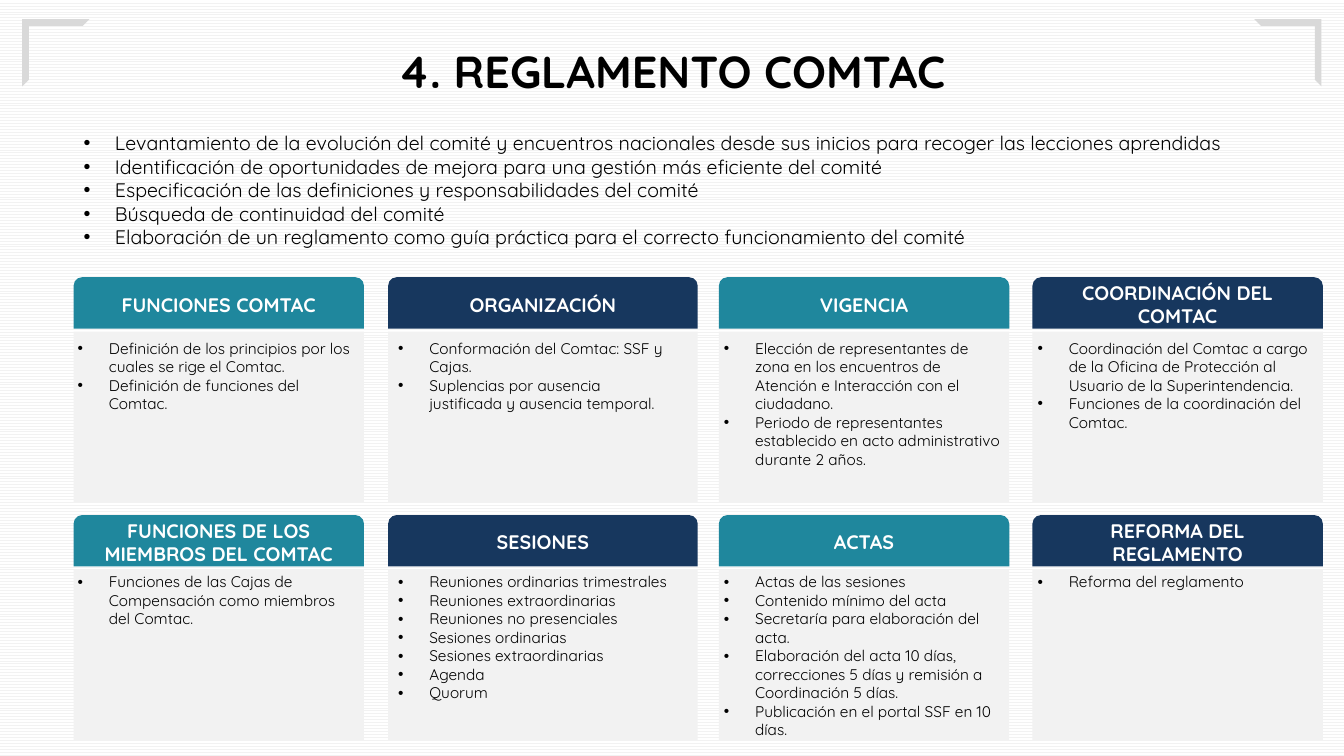
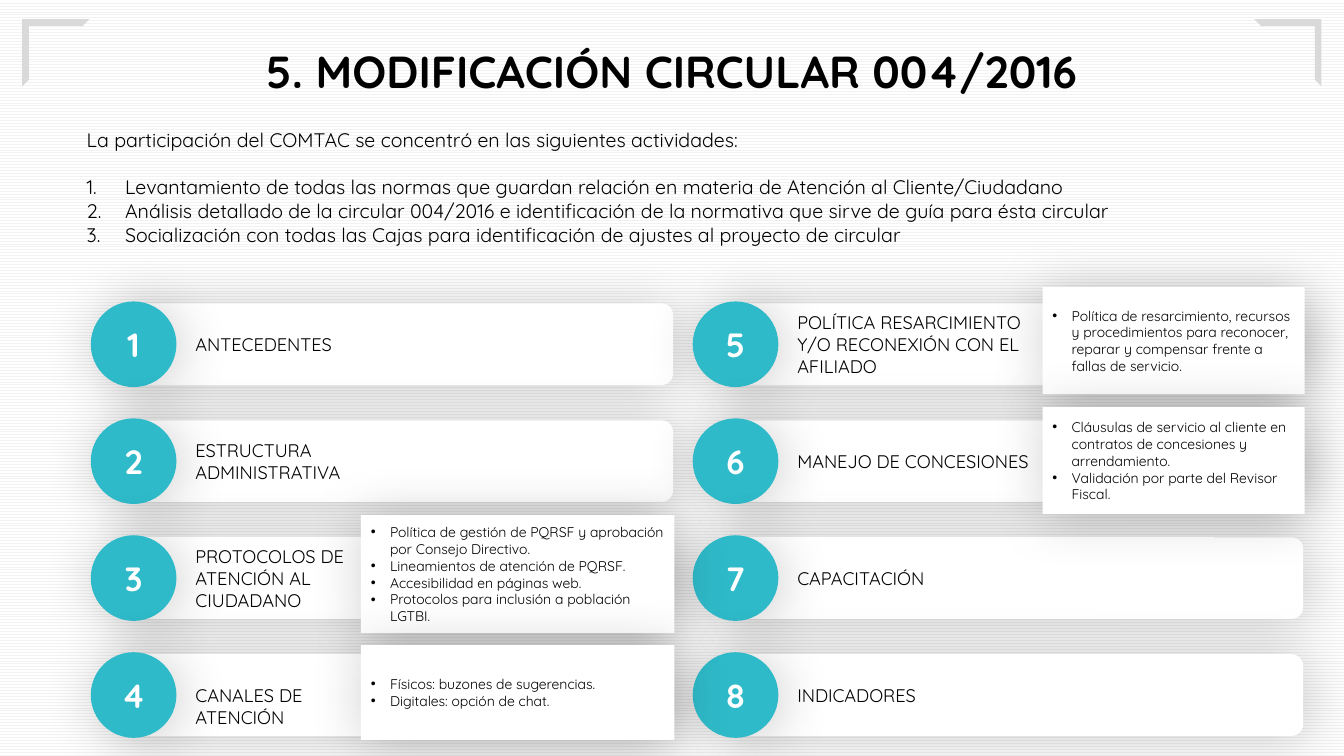
from lxml.etree import SubElement
from pptx import Presentation
from pptx.dml.color import RGBColor
from pptx.enum.dml import MSO_PATTERN
from pptx.enum.shapes import MSO_SHAPE as Kind
from pptx.enum.text import MSO_ANCHOR as Anchor, MSO_AUTO_SIZE as Fit, PP_ALIGN as Align
from pptx.oxml.ns import qn
from pptx.util import Inches, Pt

W, H = 13.33, 7.5
FACE = "Quicksand"
TEAL, NAVY, AQUA = "1F879D", "17375E", "2FBAC9"
WHITE, BLACK, PALE, GREY = "FFFFFF", "000000", "F2F2F2", "D9D9D9"
color = RGBColor.from_string

TITLE = {"size": Pt(32), "bold": True}
LEAD = {"size": Pt(14)}
HEAD = {"size": Pt(14), "bold": True}
NOTE = {"size": Pt(11)}
LABEL = {"size": Pt(13)}
DIGIT = {"size": Pt(24), "bold": True}
SMALL = {"size": Pt(10)}


def draw(slide, kind, area, fill, glow=False):
    """Add a filled shape without outline; glow gives it a soft shadow."""
    shape = slide.shapes.add_shape(kind, *map(Inches, area))
    shape.fill.solid()
    shape.fill.fore_color.rgb = color(fill)
    shape.line.fill.background()
    shape.shadow.inherit = False
    if glow:
        effects = shape._element.spPr.find(qn("a:effectLst"))
        shade = SubElement(effects, qn("a:outerShdw"), blurRad=str(Pt(40)),
                           dist=str(Pt(3)), dir="2700000", algn="tl", rotWithShape="0")
        tint = SubElement(shade, qn("a:srgbClr"), val=BLACK)
        SubElement(tint, qn("a:alpha"), val="20000")
    return shape


def write(shape, lines, style, ink=BLACK, align=Align.LEFT, anchor=Anchor.MIDDLE,
          inset=(0.1, 0.05, 0.1, 0.05), mark=None, hang=0, plain=0):
    """Fill a shape with paragraphs; mark is a bullet tag, left out of the first plain ones."""
    frame = shape.text_frame
    sides = ("margin_left", "margin_top", "margin_right", "margin_bottom")
    look = dict(zip(sides, map(Inches, inset)), word_wrap=True,
                auto_size=Fit.NONE, vertical_anchor=anchor)
    for key, value in look.items():
        setattr(frame, key, value)
    for i, line in enumerate(lines):
        para = frame.add_paragraph() if i else frame.paragraphs[0]
        para.alignment = align
        para.space_before = Pt(17 if plain and i == plain else 0)
        props = para._p.get_or_add_pPr()
        tag = mark if i >= plain else None
        depth = Inches(hang) if tag else 0
        props.set("marL", str(depth))
        props.set("indent", str(-depth))
        if tag == "buChar":
            SubElement(props, qn("a:buFont"), typeface="Arial")
            SubElement(props, qn("a:buChar"), char="•")
        elif tag == "buAutoNum":
            SubElement(props, qn("a:buFont"), typeface="+mj-lt")
            SubElement(props, qn("a:buAutoNum"), type="arabicPeriod")
        else:
            SubElement(props, qn("a:buNone"))
        run = para.add_run()
        run.text = line
        run.font.color.rgb = color(ink)
        for key, value in {"name": FACE, **style}.items():
            setattr(run.font, key, value)


deck = Presentation()
deck.slide_width, deck.slide_height = Inches(W), Inches(H)

back = deck.slide_master.background.fill
back.patterned()
back.pattern = MSO_PATTERN.ZIG_ZAG
back.fore_color.rgb = color(PALE)
back.back_color.rgb = color(WHITE)

# Shared title, corner frames and lead list
pages = [
    ("4. REGLAMENTO COMTAC", (0.73, 1.25, 12.38, 1.28),
     {"mark": "buChar", "hang": 0.31},
     ["Levantamiento de la evolución del comité y encuentros nacionales desde sus inicios para recoger las lecciones aprendidas",
      "Identificación de oportunidades de mejora para una gestión más eficiente del comité",
      "Especificación de las definiciones y responsabilidades del comité",
      "Búsqueda de continuidad del comité",
      "Elaboración de un reglamento como guía práctica para el correcto funcionamiento del comité"]),
    ("5. MODIFICACIÓN CIRCULAR 004/2016", (0.76, 1.22, 12.31, 1.28),
     {"mark": "buAutoNum", "hang": 0.38, "plain": 1},
     ["La participación del COMTAC se concentró en las siguientes actividades:",
      "Levantamiento de todas las normas que guardan relación en materia de Atención al Cliente/Ciudadano",
      "Análisis detallado de la circular 004/2016 e identificación de la normativa que sirve de guía para ésta circular",
      "Socialización con todas las Cajas para identificación de ajustes al proyecto de circular"]),
]
side = W / 20
for name, area, marks, lines in pages:
    slide = deck.slides.add_slide(deck.slide_layouts[1])
    for left, turn in ((0.22, 0), (12.44, 90)):
        edge = draw(slide, Kind.HALF_FRAME, (left, 0.19, side, side), GREY)
        edge.adjustments[0] = edge.adjustments[1] = 0.1
        edge.rotation = turn
    title, body = slide.placeholders
    spots = ((title, (W / 15, 0.43, W * 13 / 15, 0.54)), (body, area))
    for holder, spot in spots:
        for key, value in zip(("left", "top", "width", "height"), spot):
            setattr(holder, key, Inches(value))
    write(title, [name], TITLE, align=Align.CENTER, inset=(0, 0, 0, 0))
    write(body, lines, LEAD, anchor=Anchor.TOP, **marks)

rules, topics = deck.slides

# Regulation cards: four columns by two rows
cols = [(0.73, 2.88, 0.04), (3.85, 3.07, 0.1), (7.13, 2.88, 0.05), (10.24, 2.88, 0.05)]
rows = [(2.75, 0.07), (5.11, 0.03)]
cards = [
    [("FUNCIONES COMTAC",
      ["Definición de los principios por los cuales se rige el Comtac.",
       "Definición de funciones del Comtac."]),
     ("ORGANIZACIÓN",
      ["Conformación del Comtac: SSF y Cajas.",
       "Suplencias por ausencia justificada y ausencia temporal."]),
     ("VIGENCIA",
      ["Elección de representantes de zona en los encuentros de Atención e Interacción con el ciudadano.",
       "Periodo de representantes establecido en acto administrativo durante 2 años."]),
     ("COORDINACIÓN DEL COMTAC",
      ["Coordinación del Comtac a cargo de la Oficina de Protección al Usuario de la Superintendencia.",
       "Funciones de la coordinación del Comtac."])],
    [("FUNCIONES DE LOS MIEMBROS DEL COMTAC",
      ["Funciones de las Cajas de Compensación como miembros del Comtac."]),
     ("SESIONES",
      ["Reuniones ordinarias trimestrales", "Reuniones extraordinarias",
       "Reuniones no presenciales", "Sesiones ordinarias",
       "Sesiones extraordinarias", "Agenda", "Quorum"]),
     ("ACTAS",
      ["Actas de las sesiones", "Contenido mínimo del acta",
       "Secretaría para elaboración del acta.",
       "Elaboración del acta 10 días, correcciones 5 días y remisión a Coordinación 5 días.",
       "Publicación en el portal SSF en 10 días."]),
     ("REFORMA DEL REGLAMENTO", ["Reforma del reglamento"])],
]
measure = 2.76
for (top, drop), row in zip(rows, cards):
    for i, ((left, wide, pad), (name, lines)) in enumerate(zip(cols, row)):
        head = draw(rules, Kind.ROUND_2_SAME_RECTANGLE, (left, top, wide, 0.51),
                    NAVY if i % 2 else TEAL)
        write(head, [name], HEAD, WHITE, Align.CENTER)
        card = draw(rules, Kind.RECTANGLE, (left, top + 0.54, wide, 1.69), PALE)
        write(card, lines, NOTE, anchor=Anchor.TOP, mark="buChar", hang=0.31,
              inset=(pad, drop, wide - pad - measure, 0))

# Circular topics: two columns of four numbered bars
first, pitch, disc = 2.99, 1.16, 0.85
bars = [
    (0.9, 5.35, [("ANTECEDENTES", 2.56, 0), ("ESTRUCTURA ADMINISTRATIVA", 2.56, 0),
                 ("PROTOCOLOS DE ATENCIÓN AL CIUDADANO", 1.63, 0),
                 ("CANALES DE ATENCIÓN", 1.57, 0.22)]),
    (6.87, 5.63, [("POLÍTICA RESARCIMIENTO Y/O RECONEXIÓN CON EL AFILIADO", 2.56, 0),
                  ("MANEJO DE CONCESIONES", 2.56, 0), ("CAPACITACIÓN", 2.56, 0),
                  ("INDICADORES", 2.56, 0)]),
]
count = 0
for left, wide, names in bars:
    for i, (name, span, drop) in enumerate(names):
        count += 1
        top = first + i * pitch
        bar = draw(topics, Kind.ROUNDED_RECTANGLE,
                   (left + disc / 2, top + 0.02, wide, 0.81), WHITE, True)
        bar.adjustments[0] = 0.14
        write(bar, [name], LABEL, inset=(0.58, drop, wide - 0.58 - span, 0))
        dot = draw(topics, Kind.OVAL, (left, top, disc, disc), AQUA, True)
        write(dot, [str(count)], DIGIT, WHITE, Align.CENTER)

notes = [
    ((3.58, 5.11, 3.11, 1.17),
     ["Política de gestión de PQRSF y aprobación por Consejo Directivo.",
      "Lineamientos de atención de PQRSF.", "Accesibilidad en páginas web.",
      "Protocolos para inclusión a población LGTBI."]),
    ((3.58, 6.4, 3.11, 0.94),
     ["Físicos: buzones de sugerencias.", "Digitales: opción de chat."]),
    ((10.34, 2.85, 2.6, 1.06),
     ["Política de resarcimiento, recursos y procedimientos para reconocer, reparar y compensar frente a fallas de servicio."]),
    ((10.34, 4.04, 2.6, 1.06),
     ["Cláusulas de servicio al cliente en contratos de concesiones y arrendamiento.",
      "Validación por parte del Revisor Fiscal."]),
]
for area, lines in notes:
    note = draw(topics, Kind.RECTANGLE, area, WHITE, True)
    write(note, lines, SMALL, mark="buChar", hang=0.19)

deck.save("out.pptx")
